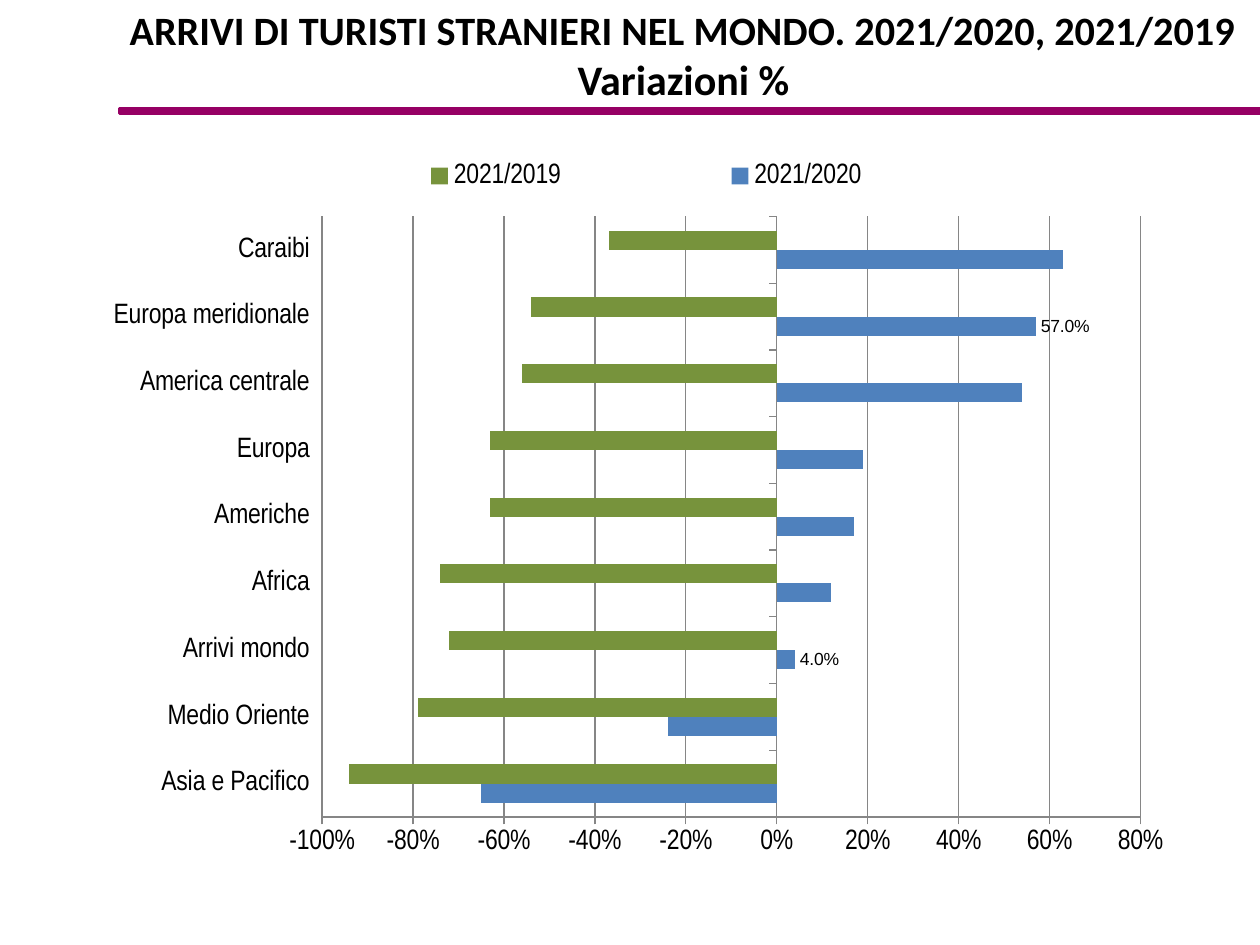
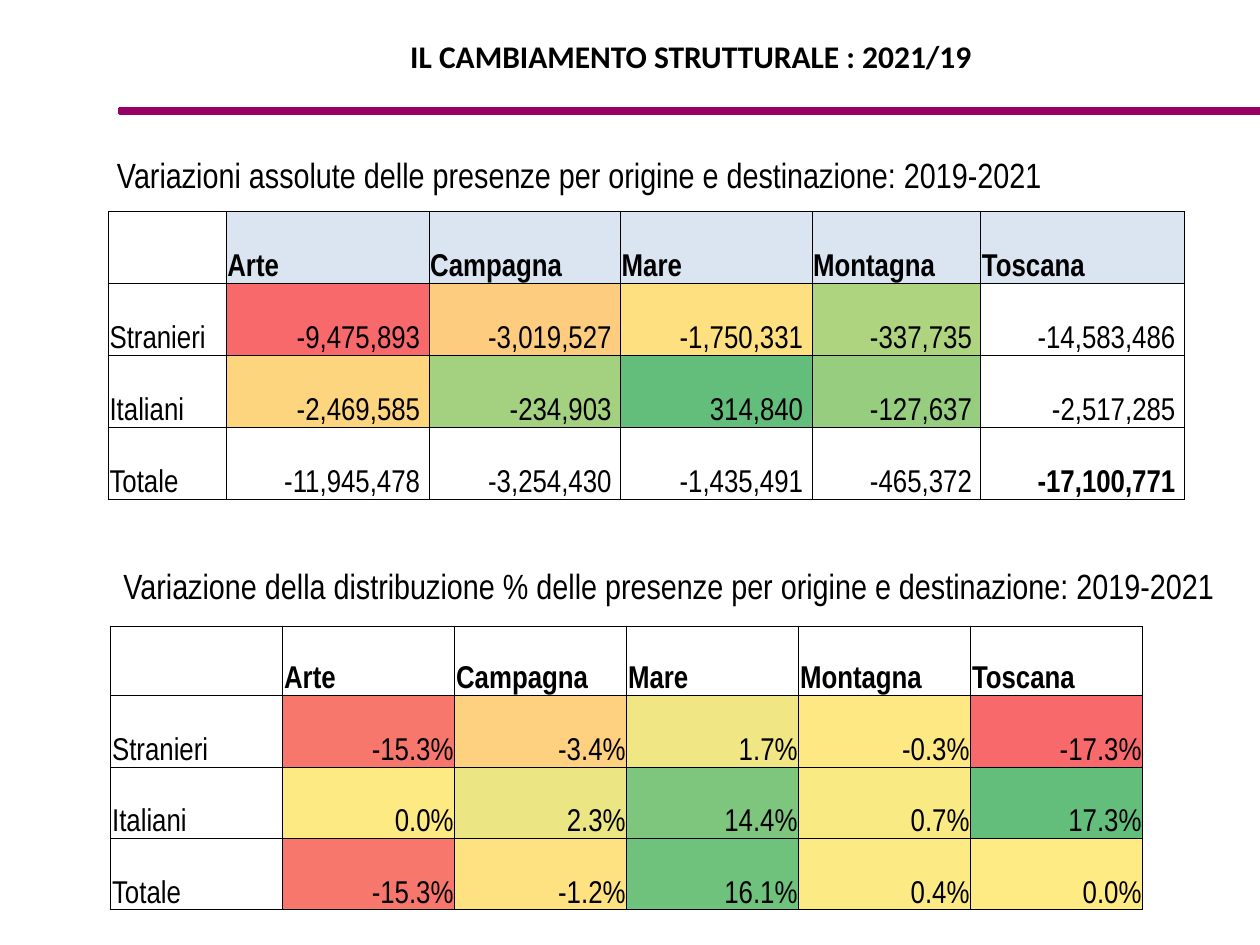
import pptx
import pptx.chart.data
import pptx.dml.color
import pptx.enum.chart
import pptx.enum.shapes
import pptx.enum.text
import pptx.oxml
import pptx.oxml.ns
import pptx.util

# Shared style
BLACK, PURPLE, GRID_GREY = "000000", "960064", "868686"
BLUE, GREEN, HEADER_BLUE = "4F81BD", "77933C", "DBE5F1"
TITLE_FONT, BODY_FONT = "Calibri", "Arial Narrow"
COLUMNS, ROWS = 100, 75
NS = pptx.oxml.ns.nsdecls

DESTINATIONS = ["Arte", "Campagna", "Mare", "Montagna", "Toscana"]


def colour(hex_code):
    return pptx.dml.color.RGBColor.from_string(hex_code)


def style_font(font, size, name=BODY_FONT, bold=False):
    font.size = pptx.util.Pt(size)
    font.name = name
    font.bold = bold
    font.color.rgb = colour(BLACK)


def chart_layout(x, y, width, height, target=""):
    return pptx.oxml.parse_xml(
        f'<c:layout {NS("c")}><c:manualLayout>{target}'
        '<c:xMode val="edge"/><c:yMode val="edge"/>'
        f'<c:x val="{x}"/><c:y val="{y}"/><c:w val="{width}"/><c:h val="{height}"/>'
        '</c:manualLayout></c:layout>')


class Deck:
    """Holds the style and the current slide; lengths are grid columns and rows."""

    def __init__(self):
        self.prs = pptx.Presentation()
        self.prs.slide_width = pptx.util.Inches(10)
        self.prs.slide_height = pptx.util.Inches(7.5)
        self.slide = None

    def x(self, columns):
        return round(self.prs.slide_width * columns / COLUMNS)

    def y(self, rows):
        return round(self.prs.slide_height * rows / ROWS)

    def box(self, left, top, width, height):
        return self.x(left), self.y(top), self.x(width), self.y(height)

    def new_slide(self, heading, sizes, left, top, width):
        self.slide = self.prs.slides.add_slide(self.prs.slide_layouts[5])
        self.rule()
        title = self.slide.shapes.title
        title.left, title.top, title.width, title.height = self.box(left, top, width, 8.2)
        frame = title.text_frame
        frame.text = heading
        frame.word_wrap = True
        frame.auto_size = pptx.enum.text.MSO_AUTO_SIZE.NONE
        frame.vertical_anchor = pptx.enum.text.MSO_ANCHOR.MIDDLE
        line = frame.paragraphs[0]
        line.alignment = pptx.enum.text.PP_ALIGN.CENTER
        for run, size in zip(line.runs, sizes):
            style_font(run.font, size, TITLE_FONT, True)

    def rule(self):
        rule = self.slide.shapes.add_shape(
            pptx.enum.shapes.MSO_SHAPE.RECTANGLE, *self.box(9.5, 8.6, 90.5, 0.4))
        rule.shadow.inherit = False
        rule.fill.solid()
        rule.fill.fore_color.rgb = colour(PURPLE)
        rule.line.color.rgb = colour(PURPLE)
        rule.line.width = pptx.util.Pt(2)

    def caption(self, wording, left, top, width):
        caption = self.slide.shapes.add_textbox(*self.box(left, top, width, 4.4))
        caption.text_frame.word_wrap = True
        caption.text_frame.text = wording
        style_font(caption.text_frame.paragraphs[0].runs[0].font, 20)

    def bar_chart(self, categories, series, labelled, left, top, width, height):
        data = pptx.chart.data.CategoryChartData(number_format="0.0%")
        data.categories = categories
        for name, values, _ in series:
            data.add_series(name, values)
        chart = self.slide.shapes.add_chart(
            pptx.enum.chart.XL_CHART_TYPE.BAR_CLUSTERED,
            *self.box(left, top, width, height), data).chart
        chart.has_title = False
        style_font(chart.font, 16)
        plot = chart.plots[0]
        plot.gap_width, plot.overlap, plot.vary_by_categories = 150, 0, False
        for bars, (_, _, fill) in zip(plot.series, series):
            bars.format.fill.solid()
            bars.format.fill.fore_color.rgb = colour(fill)
            bars.invert_if_negative = False

        # Axes
        for axis in (chart.category_axis, chart.value_axis):
            axis.major_tick_mark = pptx.enum.chart.XL_TICK_MARK.OUTSIDE
            axis.tick_label_position = pptx.enum.chart.XL_TICK_LABEL_POSITION.LOW
            axis.format.line.color.rgb = colour(GRID_GREY)
        scale = chart.value_axis
        scale.minimum_scale, scale.maximum_scale, scale.major_unit = -1, 0.8, 0.2
        scale.tick_labels.number_format = "0%"
        scale.tick_labels.number_format_is_linked = False
        scale.major_gridlines.format.line.color.rgb = colour(GRID_GREY)

        # Labels on single bars of the first series
        plot.series[0].data_labels.show_value = False
        for point in labelled:
            label = plot.series[0].points[point].data_label
            style_font(label.font, 10, "Arial")
            label.position = pptx.enum.chart.XL_LABEL_POSITION.OUTSIDE_END

        # Legend above the bars, and plot area
        chart.has_legend = True
        legend = chart.legend
        legend.position = pptx.enum.chart.XL_LEGEND_POSITION.RIGHT
        legend.include_in_layout = False
        style_font(legend.font, 16)
        position = legend._element.find(pptx.oxml.ns.qn("c:legendPos"))
        for old in legend._element.findall(pptx.oxml.ns.qn("c:layout")):
            legend._element.remove(old)
        position.addnext(chart_layout(0.16, 0.02, 0.66, 0.08))
        area = chart._chartSpace.chart.plotArea
        for old in area.findall(pptx.oxml.ns.qn("c:layout")):
            area.remove(old)
        area.insert(0, chart_layout(0.206, 0.114, 0.717, 0.801,
                                    '<c:layoutTarget val="inner"/>'))

    def table(self, body, widths, heights, left, top, header_fill=None,
              number_margin=0.01, bold_total=False):
        grid = self.slide.shapes.add_table(
            len(heights), len(widths),
            *self.box(left, top, sum(widths), sum(heights))).table
        grid.first_row = grid.horz_banding = False
        for column, width in zip(grid.columns, widths):
            column.width = self.x(width)
        for row, height in zip(grid.rows, heights):
            row.height = self.y(height)
        header = [("", None)] + [(name, header_fill) for name in DESTINATIONS]
        lines = [header] + [[(name, None)] + list(zip(values, fills))
                            for name, values, fills in body]
        last = len(lines) - 1, len(widths) - 1
        for r, line in enumerate(lines):
            for c, (wording, fill) in enumerate(line):
                number = r > 0 and c > 0
                bold = r == 0 or (bold_total and (r, c) == last)
                self.cell(grid.cell(r, c), wording, fill, bold, number,
                          number_margin if number else 0.01)

    def cell(self, cell, wording, fill, bold, number, right_margin):
        cell.text = wording
        cell.vertical_anchor = pptx.enum.text.MSO_ANCHOR.BOTTOM
        cell.margin_left = cell.margin_top = pptx.util.Inches(0.01)
        cell.margin_right = pptx.util.Inches(right_margin)
        cell.margin_bottom = 0
        line = cell.text_frame.paragraphs[0]
        if number:
            line.alignment = pptx.enum.text.PP_ALIGN.RIGHT
        for run in line.runs:
            style_font(run.font, 18, bold=bold)
        properties = cell._tc.get_or_add_tcPr()
        for side in "LRTB":
            properties.append(pptx.oxml.parse_xml(
                f'<a:ln{side} {NS("a")} w="6350"><a:solidFill>'
                f'<a:srgbClr val="{BLACK}"/></a:solidFill></a:ln{side}>'))
        if fill:
            cell.fill.solid()
            cell.fill.fore_color.rgb = colour(fill)
        else:
            cell.fill.background()


def arrivals(deck):
    deck.new_slide("ARRIVI DI TURISTI STRANIERI NEL MONDO. 2021/2020, 2021/2019"
                   "\vVariazioni %", (23, 24), 8.7, 0.2, 91.1)
    areas = ["Asia e Pacifico", "Medio Oriente", "Arrivi mondo", "Africa", "Americhe",
             "Europa", "America centrale", "Europa meridionale", "Caraibi"]
    changes = [
        ("2021/2020", (-0.65, -0.24, 0.04, 0.12, 0.17, 0.19, 0.54, 0.57, 0.63), BLUE),
        ("2021/2019", (-0.94, -0.79, -0.72, -0.74, -0.63, -0.63, -0.56, -0.54, -0.37),
         GREEN),
    ]
    labelled = [areas.index("Arrivi mondo"), areas.index("Europa meridionale")]
    deck.bar_chart(areas, changes, labelled, 6.9, 10.4, 90.6, 59.5)


def structural_change(deck):
    deck.new_slide("IL CAMBIAMENTO STRUTTURALE : 2021/19", (18,), 9.9, 0.3, 89.9)

    # Absolute changes
    deck.caption("Variazioni assolute delle presenze per origine e destinazione: "
                 "2019-2021", 8.3, 11.7, 85.6)
    absolute = [
        ("Stranieri",
         ("-9,475,893", "-3,019,527", "-1,750,331", "-337,735", "-14,583,486"),
         ("F8696B", "FDCC7E", "FEE081", "AED480", None)),
        ("Italiani",
         ("-2,469,585", "-234,903", "314,840", "-127,637", "-2,517,285"),
         ("FDD57F", "A3D17F", "63BE7B", "96CD7E", None)),
        ("Totale",
         ("-11,945,478", "-3,254,430", "-1,435,491", "-465,372", "-17,100,771"),
         (None,) * 5),
    ]
    deck.table(absolute, (9.35, 16.1, 15.2, 15.2, 13.4, 16.15), (5.71,) * 4, 8.6, 16.8,
               header_fill=HEADER_BLUE, number_margin=0.07, bold_total=True)

    # Changes in the percentage shares
    deck.caption("Variazione della distribuzione % delle presenze per origine e "
                 "destinazione: 2019-2021", 8.8, 44.3, 91.2)
    shares = [
        ("Stranieri", ("-15.3%", "-3.4%", "1.7%", "-0.3%", "-17.3%"),
         ("F8776D", "FDD17F", "F0E784", "FEE883", "F8696B")),
        ("Italiani", ("0.0%", "2.3%", "14.4%", "0.7%", "17.3%"),
         ("FEEA83", "EBE683", "7EC67D", "F9EA84", "63BE7B")),
        ("Totale", ("-15.3%", "-1.2%", "16.1%", "0.4%", "0.0%"),
         ("F8776D", "FEE282", "6FC27C", "FCEA84", "FFEB84")),
    ]
    deck.table(shares, (13.65,) * 6, (5.5, 5.67, 5.67, 5.67), 8.8, 49.7)


def main():
    deck = Deck()
    arrivals(deck)
    structural_change(deck)
    deck.prs.save("out.pptx")


if __name__ == "__main__":
    main()
